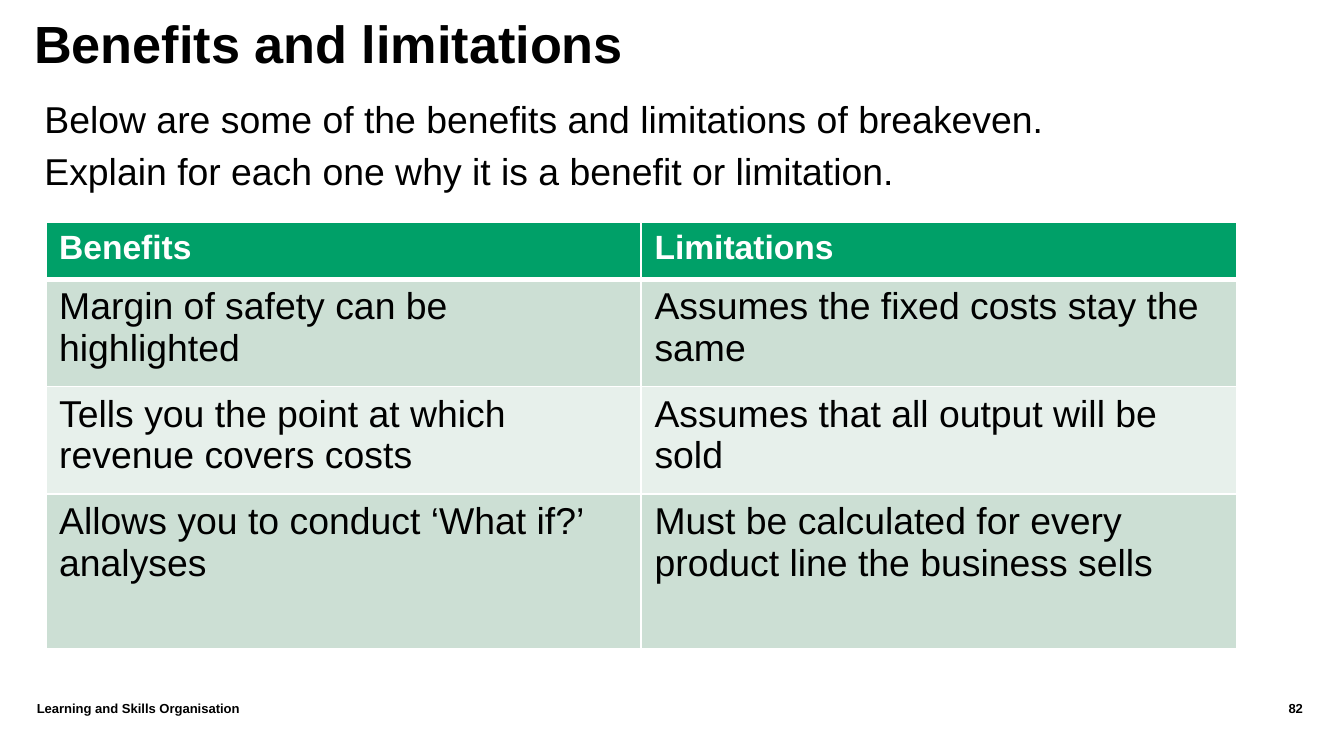
from dataclasses import dataclass

import lxml.etree
import pptx
import pptx.dml.color
import pptx.enum.text
import pptx.oxml.ns
import pptx.util

WIDTH = pptx.util.Inches(10)
HEIGHT = WIDTH * 9 // 16
FONT = "Arial"
COLOURS = {
    "ink": "000000",
    "paper": "FFFFFF",
    "header": "00A068",
    "band": "CCDFD4",
    "pale": "E7F0EB",
}
HEADER_BORDERS = {"lnL": 1, "lnR": 1, "lnT": 1, "lnB": 3}
ALIGN = pptx.enum.text.PP_ALIGN


@dataclass(frozen=True)
class Area:
    left: float
    top: float
    width: float
    height: float

    def lengths(self) -> tuple[int, int, int, int]:
        return across(self.left), down(self.top), across(self.width), down(self.height)


@dataclass(frozen=True)
class Label:
    text: str
    area: Area
    size: int
    bold: bool = False
    align: ALIGN = ALIGN.LEFT
    spacing: int | None = None


@dataclass(frozen=True)
class Row:
    texts: tuple[str, str]
    height: float
    fill: str
    ink: str = "ink"
    size: int = 20
    header: bool = False


TITLE = Label("Benefits and limitations", Area(2.55, 4.8, 92.3, 13.5), 28, True, spacing=20)
LABELS = (
    Label(
        "Below are some of the benefits and limitations of breakeven. "
        "Explain for each one why it is a benefit or limitation.",
        Area(3.3, 11.7, 83.9, 70), 20, spacing=28,
    ),
    Label("Learning and Skills Organisation", Area(2.74, 92.7, 84.3, 5.3), 7, True),
    Label("82", Area(87, 92.7, 9.95, 5.3), 7, True, ALIGN.RIGHT),
)
TABLE_AREA = Area(3.4, 29.45, 88.6, 56.36)
ROWS = (
    Row(("Benefits", "Limitations"), 7.47, "header", "paper", 18, True),
    Row(("Margin of safety can be highlighted", "Assumes the fixed costs stay the same"),
        14.22, "band"),
    Row(("Tells you the point at which revenue covers costs", "Assumes that all output will be sold"),
        14.22, "pale"),
    Row(("Allows you to conduct ‘What if?’ analyses",
         "Must be calculated for every product line the business sells"), 20.45, "band"),
)


def across(percent: float) -> int:
    return round(WIDTH * percent / 100)


def down(percent: float) -> int:
    return round(HEIGHT * percent / 100)


def colour(name: str) -> pptx.dml.color.RGBColor:
    return pptx.dml.color.RGBColor.from_string(COLOURS[name])


def style_paragraph(para, size: int, bold: bool, ink: str) -> None:
    para.font.name = FONT
    para.font.size = pptx.util.Pt(size)
    para.font.bold = bold
    para.font.color.rgb = colour(ink)


def write_label(box, label: Label) -> None:
    box.left, box.top, box.width, box.height = label.area.lengths()
    frame = box.text_frame
    frame.text = label.text
    frame.word_wrap = True
    frame.auto_size = pptx.enum.text.MSO_AUTO_SIZE.NONE
    frame.vertical_anchor = pptx.enum.text.MSO_ANCHOR.TOP
    frame.margin_left = frame.margin_right = frame.margin_top = frame.margin_bottom = 0
    para = frame.paragraphs[0]
    para.alignment = label.align
    if label.spacing:
        para.line_spacing = pptx.util.Pt(label.spacing)
    style_paragraph(para, label.size, label.bold, "ink")


def draw_header_borders(cell) -> None:
    properties = cell._tc.get_or_add_tcPr()
    for position, (side, points) in enumerate(HEADER_BORDERS.items()):
        line = lxml.etree.Element(pptx.oxml.ns.qn(f"a:{side}"), w=str(pptx.util.Pt(points)))
        fill = lxml.etree.SubElement(line, pptx.oxml.ns.qn("a:solidFill"))
        lxml.etree.SubElement(fill, pptx.oxml.ns.qn("a:srgbClr"), val=COLOURS["paper"])
        properties.insert(position, line)


def draw_table(page, area: Area, rows: tuple[Row, ...]) -> None:
    columns = len(rows[0].texts)
    table = page.shapes.add_table(len(rows), columns, *area.lengths()).table
    for column in table.columns:
        column.width = across(area.width / columns)
    for index, row in enumerate(rows):
        table.rows[index].height = down(row.height)
        for cell, text in zip(table.rows[index].cells, row.texts):
            cell.text = text
            cell.fill.solid()
            cell.fill.fore_color.rgb = colour(row.fill)
            style_paragraph(cell.text_frame.paragraphs[0], row.size, row.header, row.ink)
            if row.header:
                draw_header_borders(cell)


def main() -> None:
    deck = pptx.Presentation()
    deck.slide_width, deck.slide_height = WIDTH, HEIGHT
    page = deck.slides.add_slide(deck.slide_layouts.get_by_name("Title Only"))
    write_label(page.shapes.title, TITLE)
    for label in LABELS:
        write_label(page.shapes.add_textbox(*label.area.lengths()), label)
    draw_table(page, TABLE_AREA, ROWS)
    deck.save("out.pptx")


if __name__ == "__main__":
    main()
